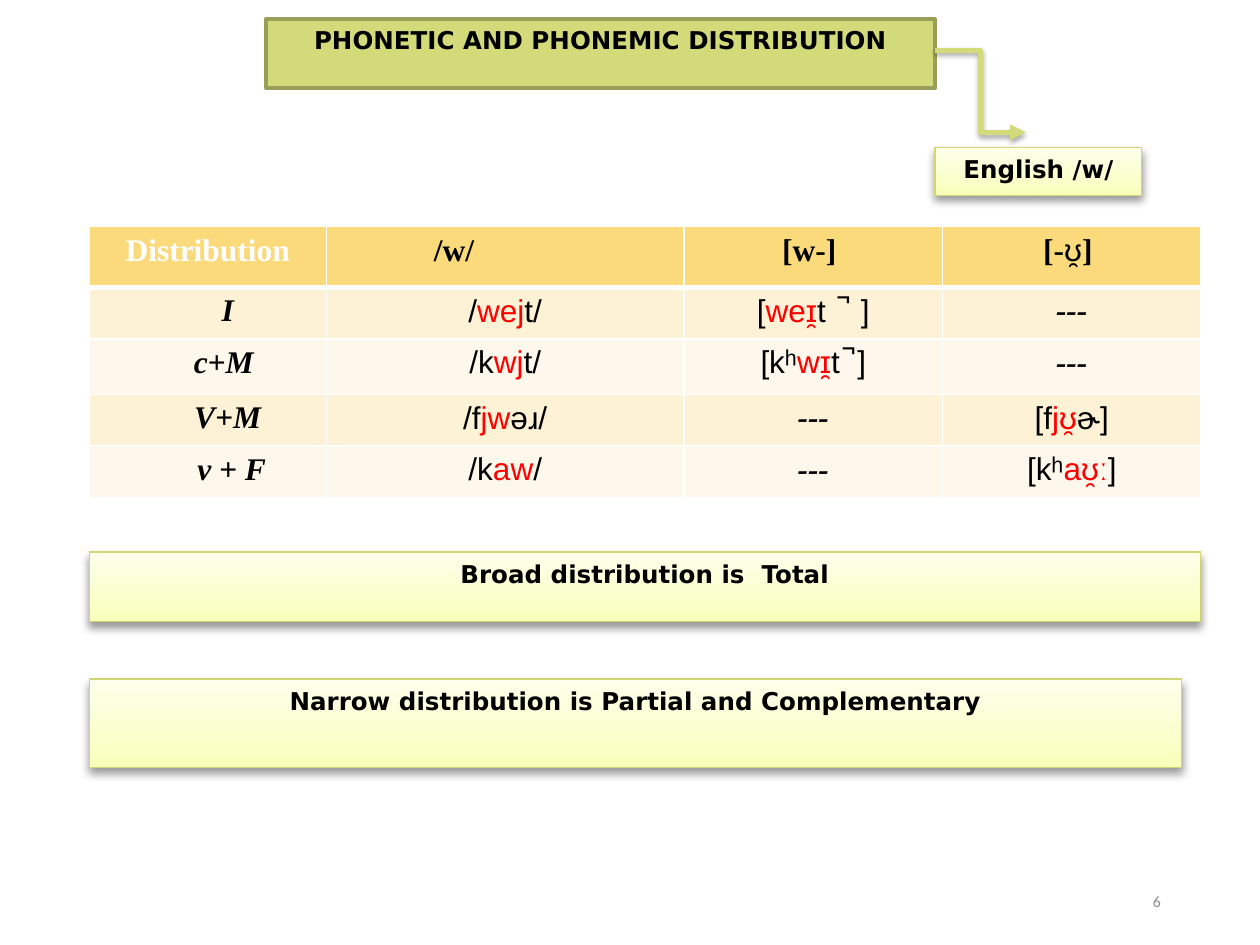
from copy import deepcopy

from lxml.etree import SubElement
from pptx import Presentation
from pptx.dml.color import RGBColor
from pptx.enum.shapes import MSO_CONNECTOR, MSO_SHAPE
from pptx.enum.text import MSO_ANCHOR, PP_ALIGN
from pptx.oxml.ns import qn
from pptx.util import Cm, Pt

INSET = 0.13
GLOW = [(0, "F8FFB8"), (0.35, "FAFFCC"), (1, "FDFFEB")]
BOLD = dict(name="DejaVu Sans", size=Pt(14), bold=True, color="000000")
HEAD = dict(name="Times New Roman", size=Pt(18), bold=True, color="000000")
HEAD_WHITE = dict(HEAD, color="FFFFFF")
LABEL = dict(HEAD, italic=True)
SOUND = dict(name="Arial", size=Pt(18), bold=False, color="000000")
SOUND_RED = dict(SOUND, color="FF0000")
NUMBER = dict(name="Calibri", size=Pt(9), color="8C8C8C")

COLUMNS = [4.78, 7.21, 5.21, 5.21]
ROWS = [1.22, 1.04, 1.12, 1.04, 1.04]
BANDS = ["FADA7A", "FDF1D6", "FEF8EC", "FDF1D6", "FEF8EC"]
CELLS = [
    ["Distribution", "/w/", "[w-]", "[-|ʊ̯|]"],
    ["I", "/|wej|t/", "[|weɪ̯|t \u00a0̚ \u00a0]", "---"],
    ["c+M", "/k|wj|t/", "[kʰ|wɪ̯|t ̚ ]", "---"],
    ["V+M", "/f|jw|əɹ/", "---", "[f|jʊ̯|ɚ]"],
    ["v + F", "/k|aw|/", "---", "[kʰ|aʊ̯ː|]"],
]
LEFT_SHIFTS = {(1, 0): 0.8, (2, 0): 0.64, (3, 0): 0.8, (4, 0): 0.96}
RIGHT_SHIFTS = {(0, 1): 2.07, (0, 2): 0.16, (0, 3): 0.16}


def color(value):
    return RGBColor.from_string(value)


def write(para, text, plain, marked=None, align=PP_ALIGN.CENTER):
    para.alignment = align
    for index, part in enumerate(text.split("|")):
        if not part:
            continue
        span = para.add_run()
        span.text = part
        for key, value in (marked if index % 2 else plain).items():
            if key == "color":
                span.font.color.rgb = color(value)
            else:
                setattr(span.font, key, value)


def set_insets(holder, left=INSET, right=INSET):
    margins = dict(left=left, right=right, top=INSET, bottom=INSET)
    for side, value in margins.items():
        setattr(holder, f"margin_{side}", Cm(value))


def cast_shadow(shape, opacity, blur, distance):
    properties = shape._element.spPr
    effects = properties.find(qn("a:effectLst"))
    if effects is None:
        effects = SubElement(properties, qn("a:effectLst"))
    shadow = SubElement(effects, qn("a:outerShdw"), blurRad=str(Pt(blur)),
                        dist=str(Pt(distance)), dir="5400000", rotWithShape="0")
    black = SubElement(shadow, qn("a:srgbClr"), val="000000")
    SubElement(black, qn("a:alpha"), val=str(opacity * 1000))


def fill_glow(shape):
    shape.fill.gradient()
    shape.fill.gradient_angle = 90
    stop_list = shape._element.spPr.find(qn("a:gradFill")).find(qn("a:gsLst"))
    stop_list.append(deepcopy(stop_list[-1]))
    for stop, (position, value) in zip(shape.fill.gradient_stops, GLOW):
        stop.position = position
        stop.color.rgb = color(value)


def add_panel(page, box, text, line, width):
    panel = page.shapes.add_shape(MSO_SHAPE.RECTANGLE, *map(Cm, box))
    panel.shadow.inherit = False
    panel.line.color.rgb = color(line)
    panel.line.width = Pt(width)
    frame = panel.text_frame
    frame.word_wrap = True
    frame.vertical_anchor = MSO_ANCHOR.TOP
    set_insets(frame)
    write(frame.paragraphs[0], text, BOLD)
    return panel


def add_banner(page, box, text):
    banner = add_panel(page, box, text, "999F59", 2)
    banner.fill.solid()
    banner.fill.fore_color.rgb = color("D2DA7A")


def add_glowing_panel(page, box, text):
    panel = add_panel(page, box, text, "CFD775", 0.75)
    fill_glow(panel)
    cast_shadow(panel, 40, 5, 3)


def add_elbow_arrow(page, box):
    left, top, width, height = box
    ends = (left, top, left + width, top + height)
    arrow = page.shapes.add_connector(MSO_CONNECTOR.ELBOW, *map(Cm, ends))
    arrow.line.color.rgb = color("D2DA7A")
    arrow.line.width = Pt(3)
    SubElement(arrow.line._get_or_add_ln(), qn("a:tailEnd"), type="triangle")
    cast_shadow(arrow, 35, 3, 1.8)


def add_borders(cell, top, bottom):
    properties = cell._tc.get_or_add_tcPr()
    widths = dict(lnL=1, lnR=1, lnT=top, lnB=bottom)
    for index, (side, width) in enumerate(widths.items()):
        border = SubElement(properties, qn(f"a:{side}"), w=str(Pt(width)))
        fill = SubElement(border, qn("a:solidFill"))
        SubElement(fill, qn("a:srgbClr"), val="FFFFFF")
        properties.insert(index, border)


def cell_formats(row, column, text):
    if row == 0:
        return (HEAD if column else HEAD_WHITE), SOUND
    if column == 0 or text == "---":
        return LABEL, None
    return SOUND, SOUND_RED


def add_distribution_table(page, box):
    table = page.shapes.add_table(len(ROWS), len(COLUMNS), *map(Cm, box)).table
    for column, width in zip(table.columns, COLUMNS):
        column.width = Cm(width)
    for row, height in zip(table.rows, ROWS):
        row.height = Cm(height)
    for row, texts in enumerate(CELLS):
        for column, text in enumerate(texts):
            cell = table.cell(row, column)
            cell.fill.solid()
            cell.fill.fore_color.rgb = color(BANDS[row])
            add_borders(cell, 3 if row == 1 else 1, 3 if row == 0 else 1)
            place = (row, column)
            set_insets(cell, INSET + LEFT_SHIFTS.get(place, 0),
                       INSET + RIGHT_SHIFTS.get(place, 0))
            write(cell.text_frame.paragraphs[0], text,
                  *cell_formats(row, column, text))


def add_page_number(page, box, text):
    frame = page.shapes.add_textbox(*map(Cm, box)).text_frame
    frame.word_wrap = True
    frame.vertical_anchor = MSO_ANCHOR.MIDDLE
    write(frame.paragraphs[0], text, NUMBER, align=PP_ALIGN.RIGHT)


def main():
    deck = Presentation()
    deck.slide_width, deck.slide_height = Cm(25.4), Cm(19.05)
    page = deck.slides.add_slide(deck.slide_layouts[6])
    add_banner(page, (5.36, 0.38, 13.49, 1.4),
               "PHONETIC AND PHONEMIC DISTRIBUTION")
    add_glowing_panel(page, (18.85, 2.97, 4.17, 0.97), "English /w/")
    add_distribution_table(page, (1.8, 4.57, sum(COLUMNS), sum(ROWS)))
    add_glowing_panel(page, (1.8, 11.13, 22.4, 1.4),
                      "Broad distribution is  Total")
    add_glowing_panel(page, (1.8, 13.69, 22.02, 1.78),
                      "Narrow distribution is Partial and Complementary")
    add_elbow_arrow(page, (18.85, 1.02, 1.83, 1.65))
    add_page_number(page, (17.93, 17.65, 5.72, 1.02), "6")
    deck.save("out.pptx")


if __name__ == "__main__":
    main()
